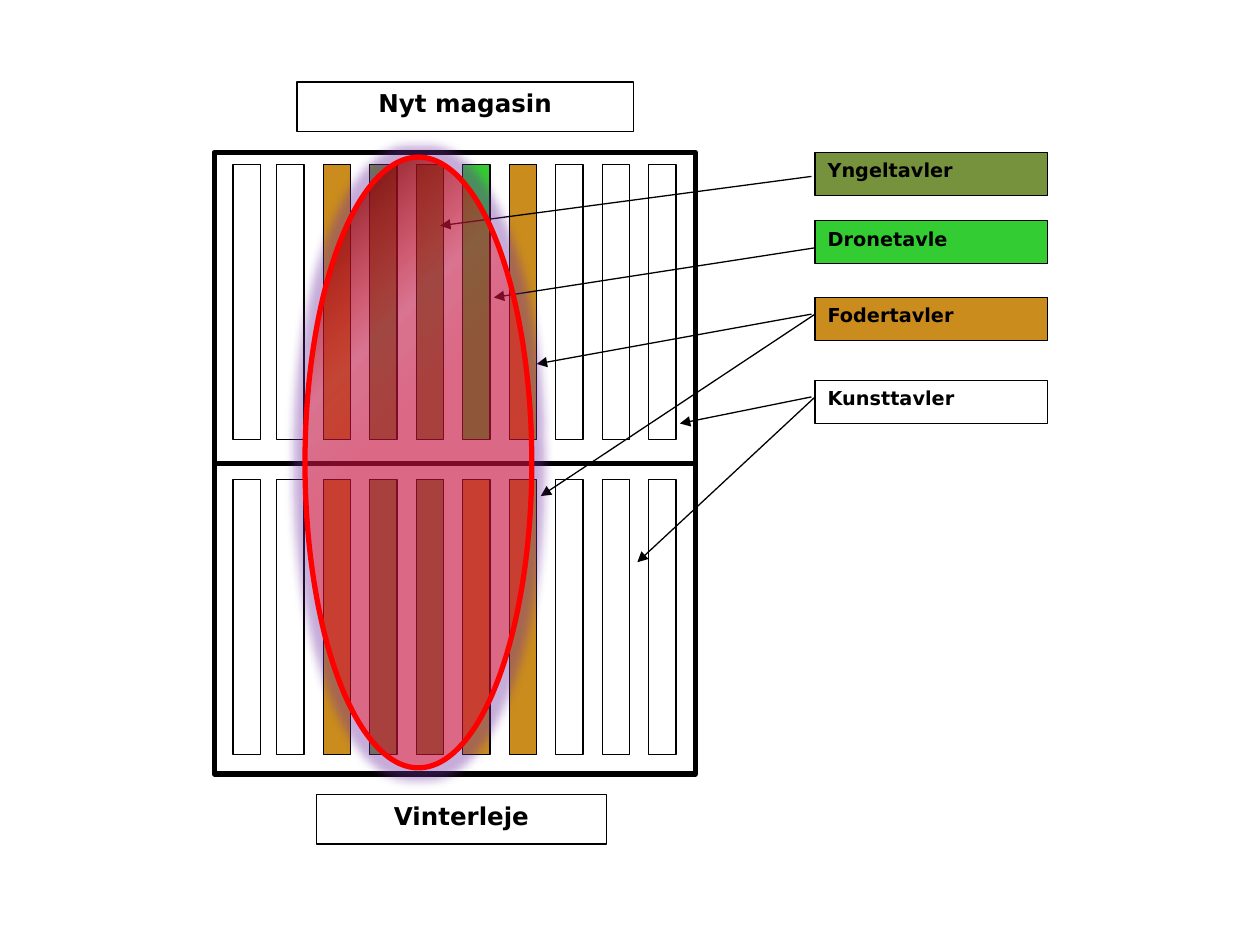
from lxml import etree
from pptx import Presentation
from pptx.dml.color import RGBColor
from pptx.enum.shapes import MSO_CONNECTOR, MSO_SHAPE
from pptx.enum.text import MSO_ANCHOR, PP_ALIGN
from pptx.oxml import parse_xml
from pptx.oxml.ns import nsdecls, qn
from pptx.util import Pt

RECT, OVAL = MSO_SHAPE.RECTANGLE, MSO_SHAPE.OVAL
STRAIGHT = MSO_CONNECTOR.STRAIGHT
TOP = MSO_ANCHOR.TOP
LEFT, CENTER = PP_ALIGN.LEFT, PP_ALIGN.CENTER

FONT = "DejaVu Sans"
BLACK = RGBColor(0x00, 0x00, 0x00)
EMPTY = RGBColor(0xFF, 0xFF, 0xFF)
FOOD = RGBColor(0xCA, 0x8C, 0x1C)
DRONE = RGBColor(0x33, 0xCC, 0x33)
BROOD = RGBColor(0x76, 0x92, 0x3C)
RED = RGBColor(0xFF, 0x00, 0x00)

UPPER_FRAMES = [EMPTY, EMPTY, FOOD, BROOD, BROOD, DRONE, FOOD, EMPTY, EMPTY, EMPTY]
LOWER_FRAMES = [EMPTY, EMPTY, FOOD, BROOD, BROOD, FOOD, FOOD, EMPTY, EMPTY, EMPTY]
FRAME_W, FRAME_H, FRAME_STEP = 15.6, 157, 26.57

LEGEND = [
    ("Yngeltavler", BROOD, 87.1),
    ("Dronetavle", DRONE, 126.2),
    ("Fodertavler", FOOD, 169.9),
    ("Kunsttavler", EMPTY, 217.4),
]
ARROWS = [
    (463.7, 100.8, 251.5, 129),
    (465.8, 141.6, 282.2, 170),
    (463.7, 226.8, 388.5, 242),
    (465.8, 179.5, 309, 283.5),
    (463.7, 179.5, 306.7, 208),
    (465.8, 226.8, 364.2, 321.3),
]


def add_box(slide, box, fill, line_width=0.75):
    s = slide.shapes.add_shape(RECT, *map(Pt, box))
    s.shadow.inherit = False
    s.fill.solid()
    s.fill.fore_color.rgb = fill
    s.line.color.rgb = BLACK
    s.line.width = Pt(line_width)
    return s


def add_label(slide, box, text, fill, size, align):
    tf = add_box(slide, box, fill).text_frame
    tf.word_wrap = True
    tf.vertical_anchor = TOP
    p = tf.paragraphs[0]
    p.text = text
    p.alignment = align
    p.font.name = FONT
    p.font.size = Pt(size)
    p.font.bold = True
    p.font.color.rgb = BLACK


def add_chamber(slide, box, colors, frame_inset):
    left, top = box[:2]
    add_box(slide, box, EMPTY, 3)
    for i, color in enumerate(colors):
        x = left + (9.2 + i * FRAME_STEP if i else 10.8)
        add_box(slide, (x, top + frame_inset, FRAME_W, FRAME_H), color)


def add_legend(slide, left, width):
    for text, color, top in LEGEND:
        add_label(slide, (left, top, width, 24.6), text, color, 11, LEFT)


def add_arrow(slide, points):
    c = slide.shapes.add_connector(STRAIGHT, *map(Pt, points))
    c.line.color.rgb = BLACK
    c.line.width = Pt(0.75)
    etree.SubElement(c.line._get_or_add_ln(), qn("a:tailEnd"), type="triangle")
    etree.SubElement(c._element.spPr, qn("a:effectLst"))


def add_cluster(slide, box):
    s = slide.shapes.add_shape(OVAL, *map(Pt, box))
    s.shadow.inherit = False
    s.line.color.rgb = RED
    s.line.width = Pt(3)
    spPr = s._element.spPr
    spPr.find(qn("a:prstGeom")).addnext(parse_xml(
        f'<a:gradFill {nsdecls("a")} rotWithShape="1"><a:gsLst>'
        '<a:gs pos="58000"><a:srgbClr val="FF0000"><a:alpha val="38000"/></a:srgbClr></a:gs>'
        '<a:gs pos="70000"><a:srgbClr val="FF0300"><a:alpha val="33000"/></a:srgbClr></a:gs>'
        '<a:gs pos="100000"><a:srgbClr val="4D0808"/></a:gs></a:gsLst>'
        '<a:path path="circle"><a:fillToRect l="100000" t="100000"/></a:path></a:gradFill>'))
    spPr.find(qn("a:effectLst")).append(parse_xml(
        f'<a:glow {nsdecls("a")} rad="{Pt(11)}">'
        '<a:srgbClr val="7030A0"><a:alpha val="40000"/></a:srgbClr></a:glow>'))


def main():
    prs = Presentation()
    prs.slide_width, prs.slide_height = Pt(720), Pt(540)
    slide = prs.slides.add_slide(prs.slide_layouts[6])
    add_chamber(slide, (122.4, 264.7, 275, 177.6), LOWER_FRAMES, 9.4)
    add_label(slide, (180.8, 454.1, 165.8, 28.3), "Vinterleje", EMPTY, 14, CENTER)
    add_legend(slide, 465.8, 132.8)
    add_chamber(slide, (122.4, 87.1, 275, 177.6), UPPER_FRAMES, 7.1)
    for points in ARROWS:
        add_arrow(slide, points)
    add_label(slide, (169.7, 46.9, 192.3, 28.3), "Nyt magasin", EMPTY, 14, CENTER)
    add_cluster(slide, (174.3, 89.8, 129.6, 349))
    prs.save("out.pptx")


if __name__ == "__main__":
    main()
